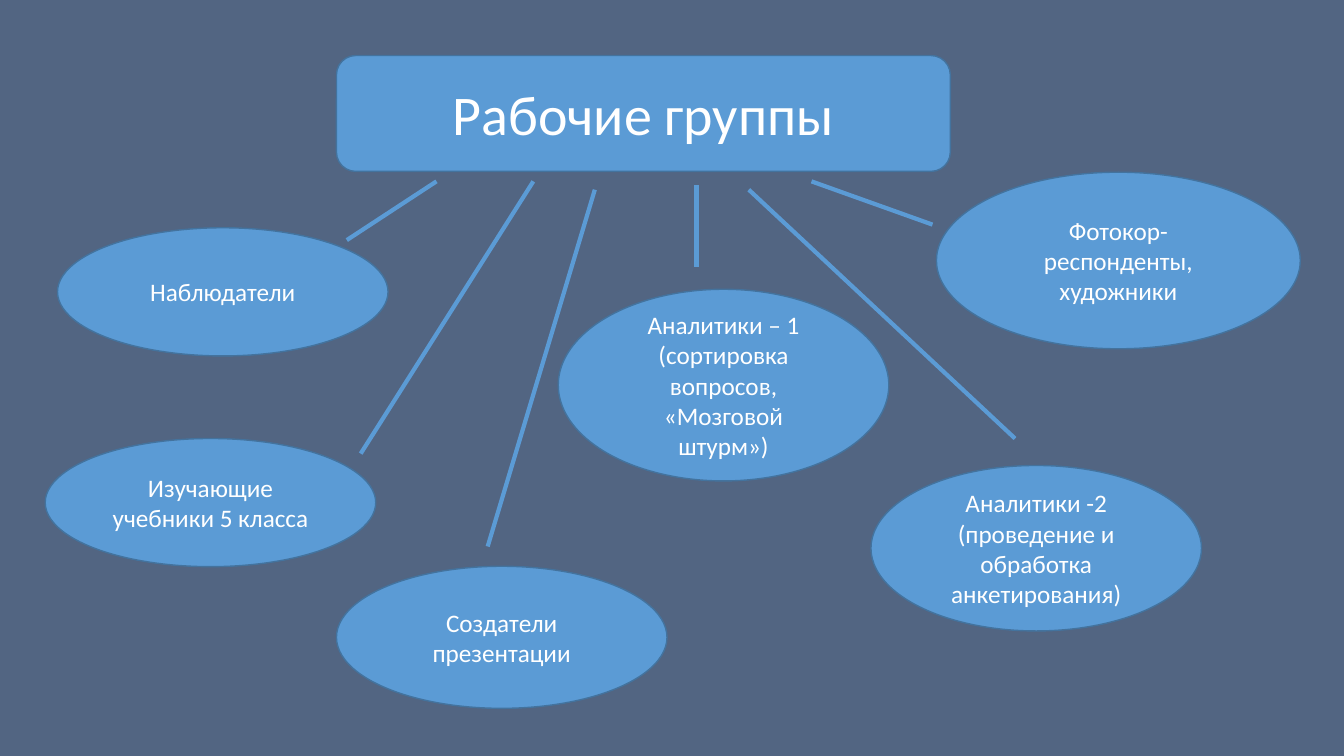
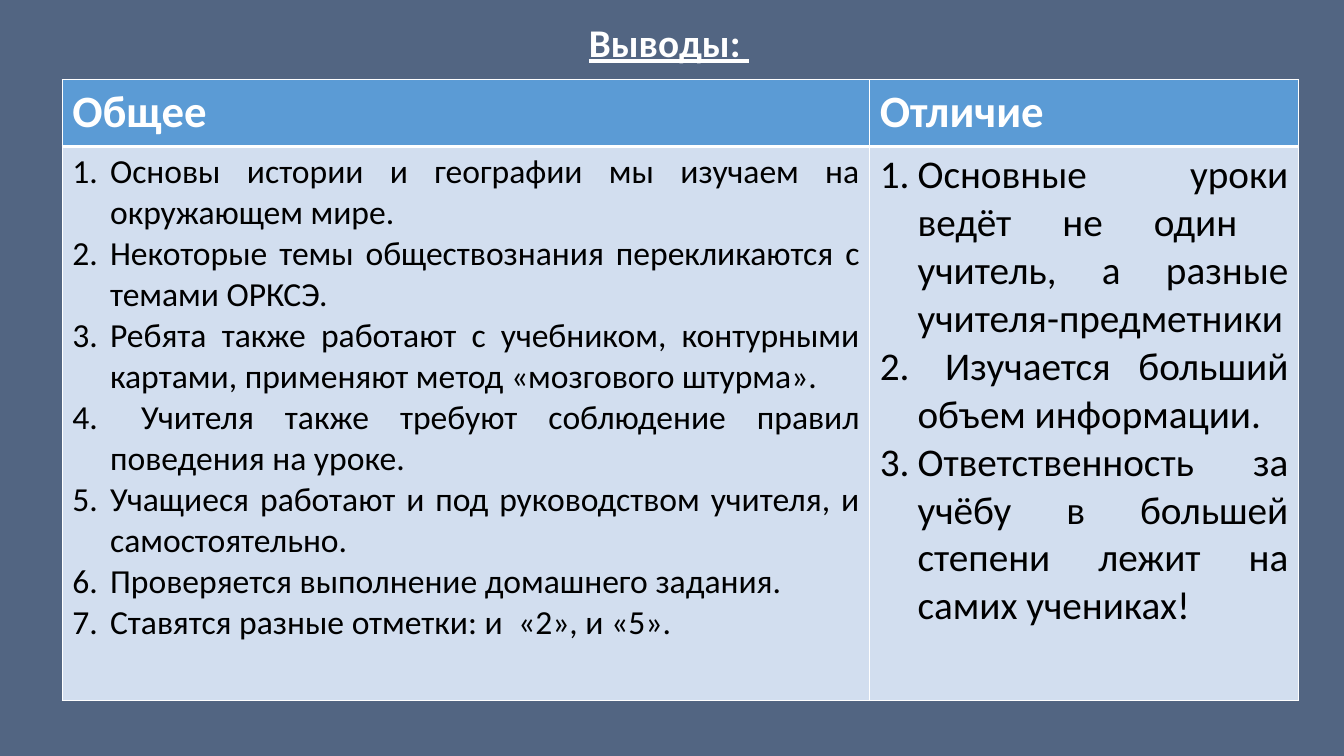
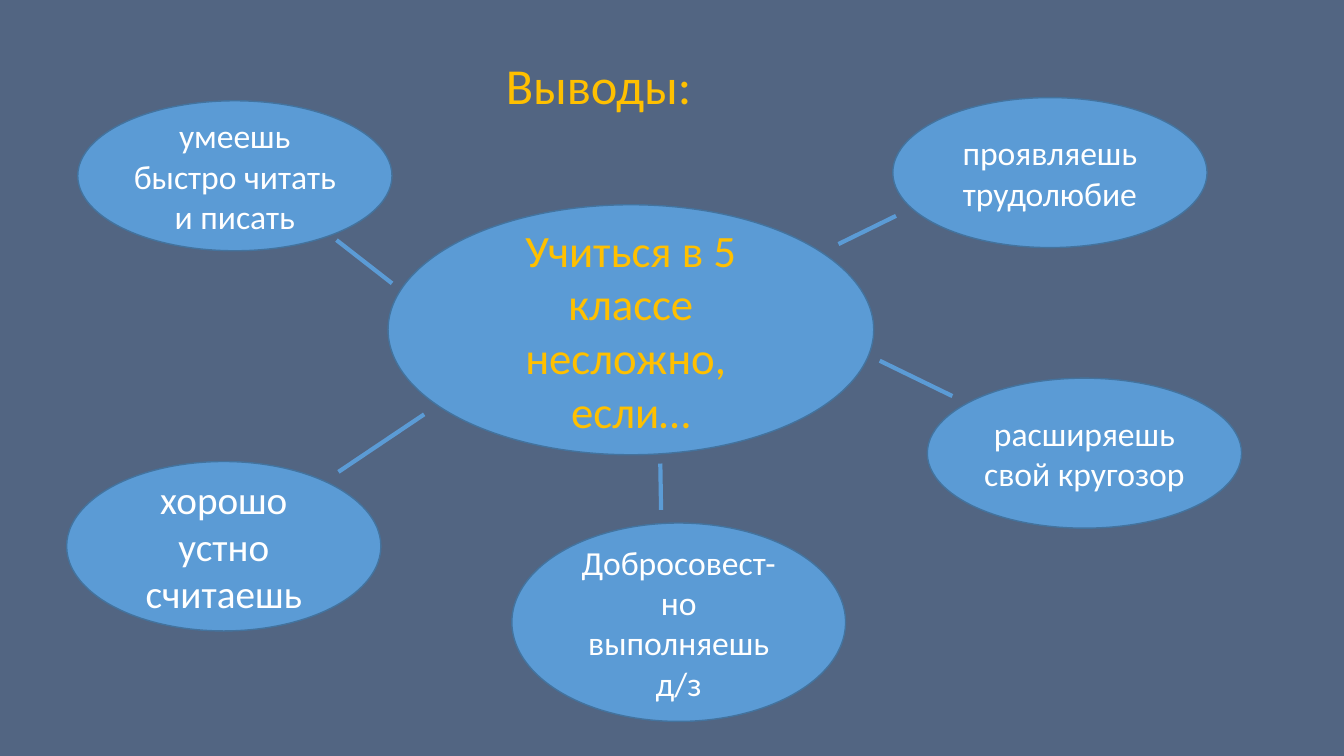
from lxml.etree import SubElement
from pptx import Presentation
from pptx.dml.color import RGBColor
from pptx.enum.shapes import MSO_CONNECTOR as Connector, MSO_SHAPE as Shape
from pptx.enum.text import MSO_ANCHOR as Anchor, PP_ALIGN as Align
from pptx.oxml.ns import qn
from pptx.util import Cm, Pt

FONT = "Calibri"
BACKGROUND = "526582"
BLUE = "5B9BD5"
OUTLINE = "43739E"
PALE = "D2DEEF"
WHITE = "FFFFFF"
BLACK = "000000"
GOLD = "FFC000"
NUMBER_INDENT = Cm(0.95)


def color(value):
    return RGBColor.from_string(value)


def paint(fill, value):
    fill.solid()
    fill.fore_color.rgb = color(value)


class Board:
    def __init__(self):
        self.deck = Presentation()
        self.deck.slide_width = Cm(33.87)
        self.deck.slide_height = Cm(19.05)
        paint(self.deck.slide_master.background.fill, BACKGROUND)
        self.slide = None

    def new_slide(self):
        self.slide = self.deck.slides.add_slide(self.deck.slide_layouts[6])

    def set_text(self, frame, text, size, ink, align, bold=False, underline=False):
        frame.text = text
        for para in frame.paragraphs:
            para.alignment = align
            for span in para.runs:
                span.font.name = FONT
                span.font.size = Pt(size)
                span.font.bold = bold
                span.font.underline = underline
                span.font.color.rgb = color(ink)

    def heading(self, text, left, top, width, height, size, ink, align, **style):
        box = self.slide.shapes.add_textbox(Cm(left), Cm(top), Cm(width), Cm(height))
        box.text_frame.word_wrap = True
        self.set_text(box.text_frame, text, size, ink, align, **style)

    def bubble(self, text, left, top, width, height, size, ink=WHITE, kind=Shape.OVAL):
        box = self.slide.shapes.add_shape(kind, Cm(left), Cm(top), Cm(width), Cm(height))
        box.shadow.inherit = False
        paint(box.fill, BLUE)
        box.line.color.rgb = color(OUTLINE)
        box.line.width = Pt(1)
        box.text_frame.vertical_anchor = Anchor.MIDDLE
        self.set_text(box.text_frame, text, size, ink, Align.CENTER)

    def rays(self, ends):
        for points in ends:
            ray = self.slide.shapes.add_connector(
                Connector.STRAIGHT, *[Cm(value) for value in points])
            ray.line.color.rgb = color(BLUE)
            ray.line.width = Pt(3)
            SubElement(ray._element.spPr, qn("a:effectLst"))

    def border(self, cell, **widths):
        properties = cell._tc.get_or_add_tcPr()
        for side in "LRTB":
            line = SubElement(properties, qn(f"a:ln{side}"), w=str(Pt(widths.get(side, 1))))
            fill = SubElement(line, qn("a:solidFill"))
            SubElement(fill, qn("a:srgbClr"), val=WHITE)

    def number(self, frame):
        for para in frame.paragraphs:
            properties = para._p.get_or_add_pPr()
            properties.set("marL", str(NUMBER_INDENT))
            properties.set("indent", str(-NUMBER_INDENT))
            SubElement(properties, qn("a:buFont"), typeface=FONT)
            SubElement(properties, qn("a:buAutoNum"), type="arabicPeriod")

    def comparison(self, left, top, row_heights, columns):
        widths = [column[0] for column in columns]
        table = self.slide.shapes.add_table(
            len(row_heights), len(columns), Cm(left), Cm(top),
            Cm(sum(widths)), Cm(sum(row_heights))).table
        for row, height in zip(table.rows, row_heights):
            row.height = Cm(height)
        for index, (width, title, size, items) in enumerate(columns):
            table.columns[index].width = Cm(width)
            head, body = table.cell(0, index), table.cell(1, index)
            self.border(head, B=3)
            self.border(body, T=3)
            paint(head.fill, BLUE)
            paint(body.fill, PALE)
            self.set_text(head.text_frame, title, 32, WHITE, Align.LEFT, bold=True)
            self.set_text(body.text_frame, "\n".join(items), size, BLACK, Align.JUSTIFY)
            self.number(body.text_frame)


def groups_slide(board):
    board.new_slide()
    board.bubble("Рабочие группы", 8.48, 1.4, 15.47, 2.92, 40, kind=Shape.ROUNDED_RECTANGLE)
    for text, left, top, width, height in [
        ("Наблюдатели", 1.45, 5.74, 8.33, 3.23),
        ("Изучающие учебники 5 класса", 1.14, 11.05, 8.33, 3.23),
        ("Аналитики – 1\n(сортировка вопросов, «Мозговой штурм»)", 14.07, 7.29, 8.33, 4.83),
        ("Создатели презентации", 8.48, 14.27, 8.33, 3.58),
        ("Аналитики -2\n(проведение и обработка анкетирования)", 21.95, 11.73, 8.33, 4.17),
        ("Фотокор-респонденты, художники", 23.6, 4.34, 9.17, 4.45),
    ]:
        board.bubble(text, left, top, width, height, 18)
    board.rays([
        (11, 4.57, 8.74, 6.05),
        (20.45, 4.57, 23.5, 5.66),
        (18.87, 4.78, 25.58, 11.05),
        (14.99, 4.78, 12.29, 13.77),
        (13.44, 4.57, 9.09, 11.43),
        (17.55, 4.67, 17.55, 6.73),
    ])


def comparison_slide(board):
    board.new_slide()
    board.heading("Выводы: ", 1.14, 0.33, 31.45, 2.49, 28, WHITE, Align.CENTER,
                  bold=True, underline=True)
    board.comparison(1.57, 2.01, [1.68, 13.97], [
        (20.35, "Общее", 24, [
            "Основы истории и географии мы изучаем на окружающем мире.",
            "Некоторые темы обществознания перекликаются с темами ОРКСЭ. ",
            "Ребята также работают с учебником, контурными картами, "
            "применяют метод «мозгового штурма».",
            " Учителя также требуют соблюдение правил поведения на уроке.",
            "Учащиеся работают и под руководством учителя, и самостоятельно.",
            "Проверяется выполнение домашнего задания.",
            "Ставятся разные отметки: и  «2», и «5».",
        ]),
        (10.8, "Отличие", 28, [
            "Основные уроки ведёт не один  учитель, а разные учителя-предметники",
            " Изучается больший объем информации.",
            "Ответственность за учёбу в большей степени лежит на самих учениках!",
        ]),
    ])


def conclusions_slide(board):
    board.new_slide()
    board.heading("Выводы:", 12.5, 1.24, 5.66, 1.8, 36, GOLD, Align.LEFT)
    board.bubble("Учиться в 5 классе несложно, \nесли…", 9.78, 5.16, 12.24, 6.3, 32, GOLD)
    for text, left, top, width, height, size in [
        ("умеешь быстро читать и писать", 1.96, 2.54, 7.92, 3.78, 24),
        ("хорошо устно считаешь", 1.68, 11.63, 7.92, 4.27, 28),
        ("Добросовест-но выполняешь д/з", 12.9, 13.18, 8.41, 5, 24),
        ("расширяешь свой кругозор", 23.37, 9.53, 7.92, 3.78, 24),
        ("проявляешь трудолюбие", 22.5, 2.46, 7.92, 3.78, 24),
    ]:
        board.bubble(text, left, top, width, height, size)
    board.rays([
        (8.48, 6.05, 9.88, 7.14),
        (22.17, 9.09, 24, 9.98),
        (16.64, 11.68, 16.66, 12.85),
        (8.53, 11.89, 10.69, 10.44),
        (21.13, 6.15, 22.58, 5.44),
    ])


def main():
    board = Board()
    groups_slide(board)
    comparison_slide(board)
    conclusions_slide(board)
    board.deck.save("out.pptx")


if __name__ == "__main__":
    main()
